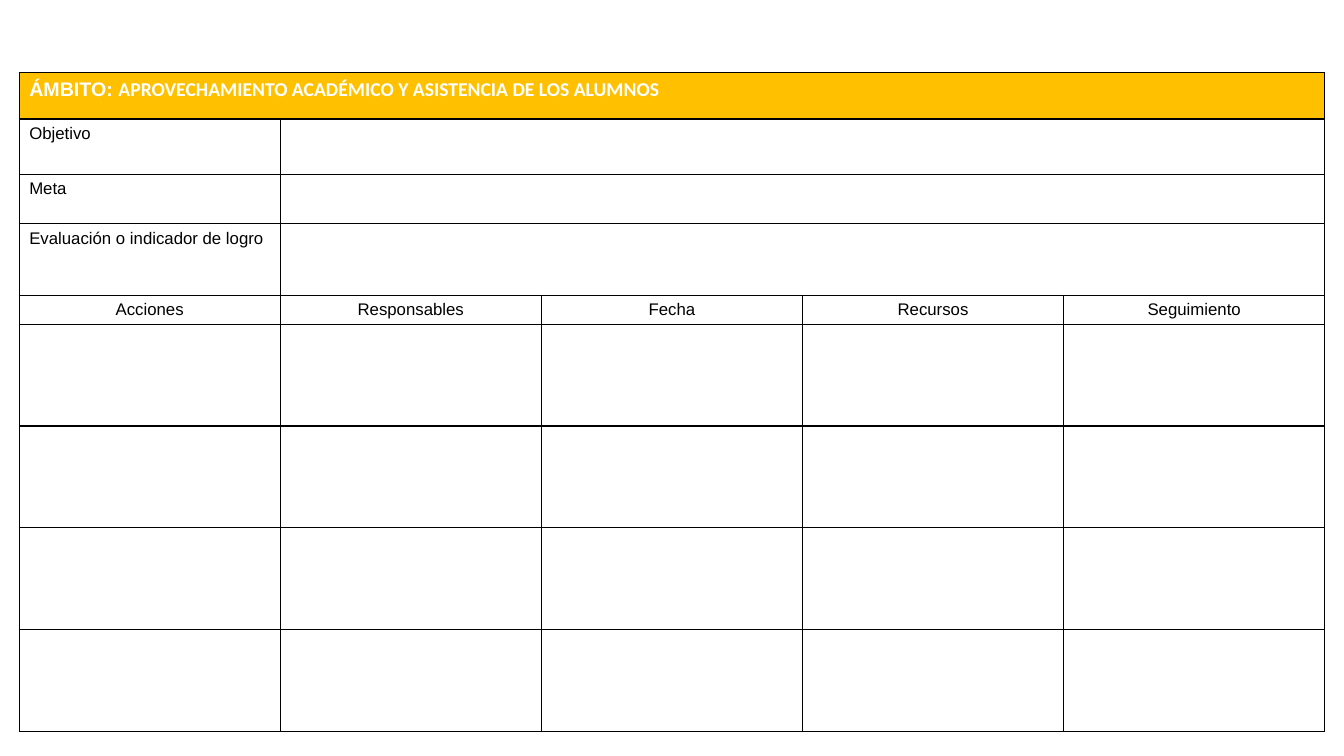
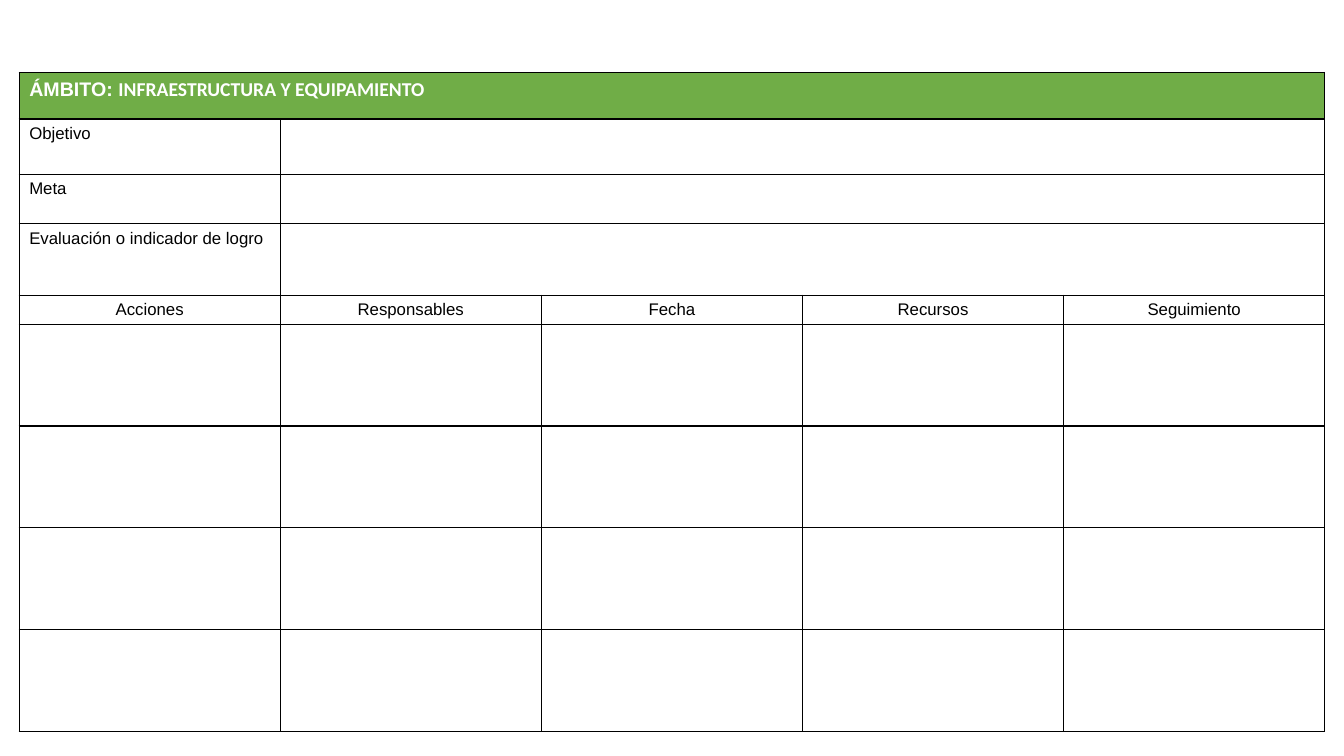
from lxml import etree
from pptx import Presentation
from pptx.dml.color import RGBColor
from pptx.enum.text import PP_ALIGN
from pptx.oxml.ns import qn
from pptx.util import Inches, Pt

CENTER = PP_ALIGN.CENTER
LEFT = PP_ALIGN.LEFT

AMBER = RGBColor(0xFF, 0xC0, 0x00)
GREEN = RGBColor(0x70, 0xAD, 0x47)
WHITE = RGBColor(0xFF, 0xFF, 0xFF)
BLACK = RGBColor(0x00, 0x00, 0x00)

BLANK_LAYOUT = 6
TABLE_LEFT, TABLE_TOP = Inches(0.19), Inches(0.72)
COLUMN_WIDTH = Inches(2.59)
ROW_HEIGHTS = [0.46, 0.55, 0.49, 0.71, 0.28] + [1.01] * 4
BORDER_WIDTH = Pt(1)

GOAL_LABELS = ["Objetivo", "Meta", "Evaluación o indicador de logro"]
ACTION_HEADINGS = ["Acciones", "Responsables", "Fecha", "Recursos", "Seguimiento"]
HEADING_ROW = 1 + len(GOAL_LABELS)

SCOPES = [
    ("APROVECHAMIENTO ACADÉMICO Y ASISTENCIA DE LOS ALUMNOS", AMBER),
    ("INFRAESTRUCTURA Y EQUIPAMIENTO", GREEN),
]


def add_borders(cell):
    """Draw a thin black line on the four sides of a cell."""
    properties = cell._tc.get_or_add_tcPr()
    for side in ("a:lnL", "a:lnR", "a:lnT", "a:lnB"):
        line = etree.SubElement(properties, qn(side), w=str(BORDER_WIDTH))
        fill = etree.SubElement(line, qn("a:solidFill"))
        etree.SubElement(fill, qn("a:srgbClr"), val=str(BLACK))


def fill_cell(cell, color):
    """Give a cell a solid background."""
    cell.fill.solid()
    cell.fill.fore_color.rgb = color


def add_run(paragraph, text, size, color, font="Arial", bold=False):
    """Append a formatted run to a paragraph."""
    run = paragraph.add_run()
    run.text = text
    run.font.name = font
    run.font.size = Pt(size)
    run.font.bold = bold
    run.font.color.rgb = color


def write_label(cell, text, alignment):
    """Write a plain label in a cell."""
    paragraph = cell.text_frame.paragraphs[0]
    paragraph.alignment = alignment
    add_run(paragraph, text, 12, BLACK)


def add_grid(slide):
    """Add the bordered white table and return it."""
    rows, columns = len(ROW_HEIGHTS), len(ACTION_HEADINGS)
    table = slide.shapes.add_table(
        rows, columns, TABLE_LEFT, TABLE_TOP,
        COLUMN_WIDTH * columns, Inches(sum(ROW_HEIGHTS)),
    ).table
    table.first_row = False
    table.horz_banding = False
    for column in table.columns:
        column.width = COLUMN_WIDTH
    for row, height in zip(table.rows, ROW_HEIGHTS):
        row.height = Inches(height)
        for cell in row.cells:
            add_borders(cell)
            fill_cell(cell, WHITE)
    return table


def write_scope(table, scope, color):
    """Merge the first row into a coloured band naming the scope."""
    band = table.cell(0, 0)
    band.merge(table.cell(0, len(ACTION_HEADINGS) - 1))
    fill_cell(band, color)
    paragraph = band.text_frame.paragraphs[0]
    add_run(paragraph, "ÁMBITO: ", 14, WHITE, bold=True)
    add_run(paragraph, scope, 14, WHITE, font="Calibri", bold=True)


def add_plan_slide(presentation, scope, color):
    """Add a slide with the planning table of one scope."""
    layout = presentation.slide_layouts[BLANK_LAYOUT]
    slide = presentation.slides.add_slide(layout)
    table = add_grid(slide)
    write_scope(table, scope, color)
    for row, label in enumerate(GOAL_LABELS, start=1):
        write_label(table.cell(row, 0), label, LEFT)
        table.cell(row, 1).merge(table.cell(row, len(ACTION_HEADINGS) - 1))
    for column, heading in enumerate(ACTION_HEADINGS):
        write_label(table.cell(HEADING_ROW, column), heading, CENTER)


def main():
    """Build and save the presentation."""
    presentation = Presentation()
    presentation.slide_width = Inches(13.33)
    presentation.slide_height = Inches(7.5)
    for scope, color in SCOPES:
        add_plan_slide(presentation, scope, color)
    presentation.save("out.pptx")


main()
